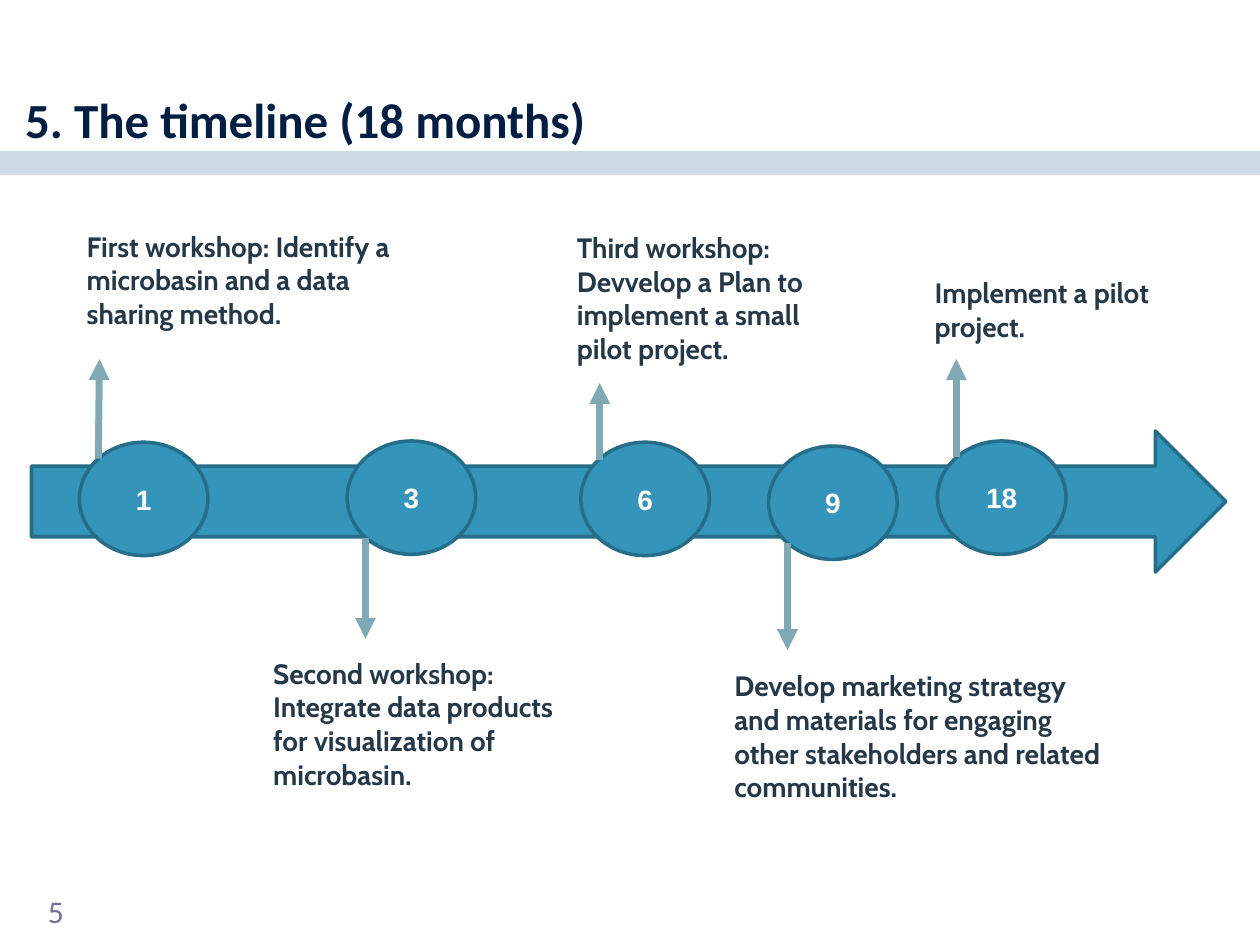
from lxml import etree
from pptx import Presentation, util as u
from pptx.dml.color import RGBColor
from pptx.enum import shapes, text
from pptx.oxml.ns import qn

NAVY = RGBColor(0x02, 0x1F, 0x43)
PALE_BLUE = RGBColor(0xCE, 0xDB, 0xE6)
BLUE = RGBColor(0x34, 0x94, 0xBA)
DARK_BLUE = RGBColor(0x26, 0x6D, 0x8A)
GREY_TEAL = RGBColor(0x80, 0xA9, 0xB3)
SLATE = RGBColor(0x25, 0x38, 0x48)
PURPLE = RGBColor(0x74, 0x70, 0x91)
WHITE = RGBColor(0xFF, 0xFF, 0xFF)

deck = Presentation()
deck.slide_width, deck.slide_height = u.Inches(10), u.Inches(7.5)
COL = deck.slide_width / 100
ROW = deck.slide_height / 75


def place(left, top, width, height):
    """Turn grid columns and rows into slide lengths."""
    return int(left * COL), int(top * ROW), int(width * COL), int(height * ROW)


def write(part, words, size, font, color, bold=True, align=text.PP_ALIGN.LEFT,
          anchor=text.MSO_ANCHOR.TOP, inset=None):
    frame = part.text_frame
    frame.word_wrap = True
    frame.auto_size = text.MSO_AUTO_SIZE.NONE
    frame.vertical_anchor = anchor
    if inset is not None:
        frame.margin_left = frame.margin_right = inset
        frame.margin_top = frame.margin_bottom = inset
    paragraph = frame.paragraphs[0]
    paragraph.alignment = align
    run = paragraph.add_run()
    run.text = words
    run.font.size, run.font.name, run.font.bold = u.Pt(size), font, bold
    run.font.color.rgb = color


slide = deck.slides.add_slide(deck.slide_layouts[5])

# Heading, band and page number
heading = slide.shapes.title
heading.left, heading.top, heading.width, heading.height = place(2, 3.5, 78.7, 8.3)
write(heading, "5. The timeline (18 months)", 28, "Calibri", NAVY,
      anchor=text.MSO_ANCHOR.BOTTOM, inset=0)

band = slide.shapes.add_shape(shapes.MSO_SHAPE.RECTANGLE, *place(0, 12, 100, 1.9))
band.shadow.inherit = False
band.fill.solid()
band.fill.fore_color.rgb = PALE_BLUE
band.line.fill.background()

page_number = slide.shapes.add_textbox(*place(3.8, 70.3, 3.5, 4))
write(page_number, "5", 18, "Calibri", PURPLE, bold=False,
      anchor=text.MSO_ANCHOR.MIDDLE, inset=0)

# Time axis with its month markers
MONTH_WIDTH, MONTH_HEIGHT = 10.2, 9
months = [("1", 6.3, 35.1), ("3", 27.55, 35), ("6", 46.1, 35.1),
          ("9", 61, 35.4), ("18", 74.4, 35)]
axis = slide.shapes.add_shape(shapes.MSO_SHAPE.RIGHT_ARROW, *place(2.5, 34.2, 94.8, 11.2))
markers = [slide.shapes.add_shape(shapes.MSO_SHAPE.OVAL,
                                  *place(left, top, MONTH_WIDTH, MONTH_HEIGHT))
           for month, left, top in months]
for part in [axis, *markers]:
    part.shadow.inherit = False
    part.fill.solid()
    part.fill.fore_color.rgb = BLUE
    part.line.color.rgb = DARK_BLUE
    part.line.width = u.Pt(2)
for marker, (month, left, top) in zip(markers, months):
    write(marker, month, 16, "Arial", WHITE, align=text.PP_ALIGN.CENTER,
          anchor=text.MSO_ANCHOR.MIDDLE)

# Milestones: words, their box, then the pointer's start and end
milestones = [
    ("First workshop: Identify a microbasin and a data sharing method.",
     (5.9, 17.7, 27, 9.1), (7.8, 36.4), (7.9, 28.5)),
    ("Second workshop: Integrate data products for visualization of microbasin.",
     (20.7, 51.6, 25.4, 14.5), (29, 42.7), (29, 50.7)),
    ("Third workshop: Devvelop a Plan to implement a small pilot project.",
     (44.8, 17.8, 23.8, 11.8), (47.6, 36.5), (47.6, 30.4)),
    ("Develop marketing strategy and materials for engaging other stakeholders "
     "and related communities.",
     (57.3, 52.6, 31.1, 11.8), (62.5, 43.1), (62.5, 51.6)),
    ("Implement a pilot project.",
     (73.2, 21.4, 22.8, 6.4), (75.9, 36.3), (75.9, 28.5)),
]
for words, box, start, end in milestones:
    milestone = slide.shapes.add_textbox(*place(*box))
    write(milestone, words, 16, "Cabin", SLATE)

    pointer = slide.shapes.add_connector(shapes.MSO_CONNECTOR.STRAIGHT, *place(*start, *end))
    pointer.line.color.rgb = GREY_TEAL
    pointer.line.width = u.Pt(4)
    etree.SubElement(pointer.line._get_or_add_ln(), qn("a:tailEnd"), type="triangle")
    etree.SubElement(pointer._element.spPr, qn("a:effectLst"))

deck.save("out.pptx")
